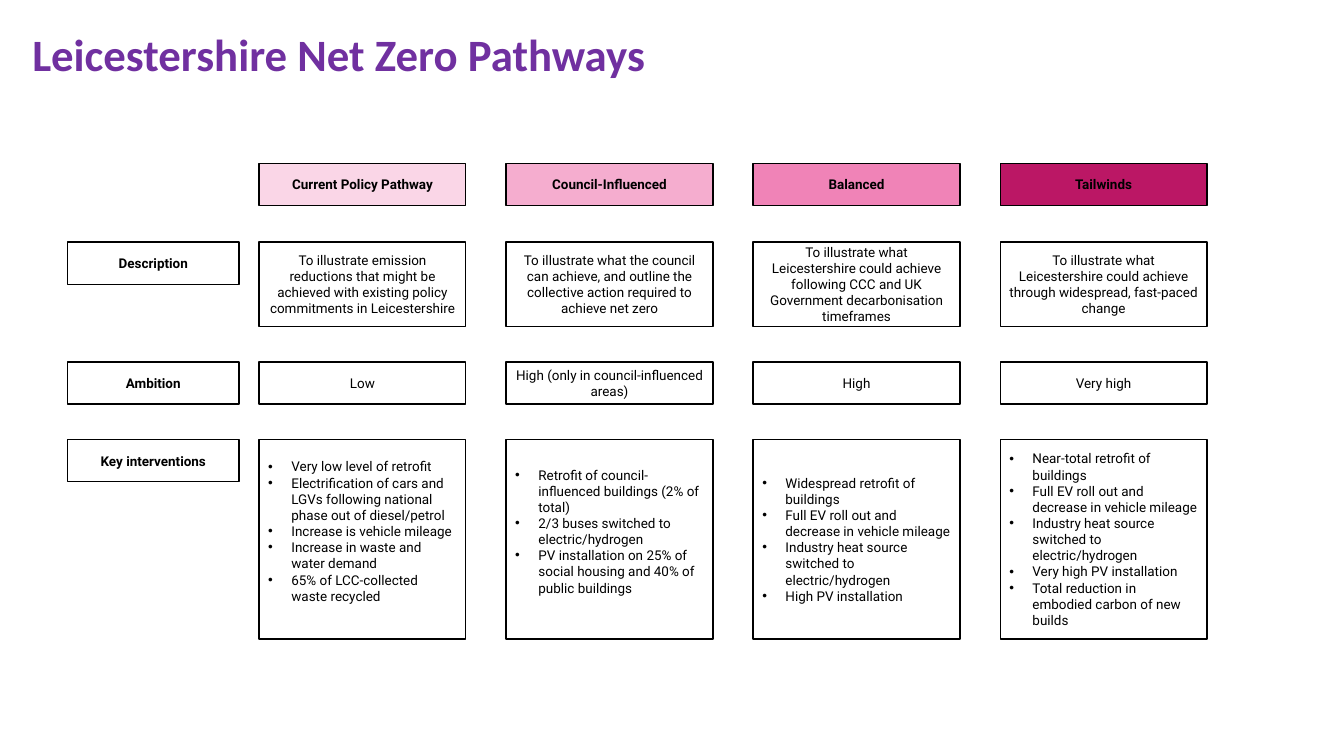
from pptx import Presentation
from pptx.dml.color import RGBColor
from pptx.enum.shapes import MSO_SHAPE
from pptx.enum.text import MSO_ANCHOR, MSO_AUTO_SIZE, PP_ALIGN
from pptx.oxml.ns import qn
from pptx.util import Pt
from lxml.etree import SubElement

SCALE = 9144
COLORS = {"ink": "000000", "title": "7030A0", "low": "FAD6E7",
          "council": "F5ADCF", "high": "F083B7", "tail": "BB1765"}
LINE = 16
INDENT = 23
WIDTH, PITCH = 205, 245

PATHWAYS = [
    ("Current Policy Pathway", "low",
     "To illustrate emission reductions that might be achieved with existing "
     "policy commitments in Leicestershire",
     "Low",
     ["Very low level of retrofit",
      "Electrification of cars and LGVs following national phase out of diesel/petrol",
      "Increase is vehicle mileage",
      "Increase in waste and water demand",
      "65% of LCC-collected waste recycled"], LINE),
    ("Council-Influenced", "council",
     "To illustrate what the council can achieve, and outline the collective "
     "action required to achieve net zero",
     "High (only in council-influenced areas)",
     ["Retrofit of council-influenced buildings (2% of total)",
      "2/3 buses switched to electric/hydrogen",
      "PV installation on 25% of social housing and 40% of public buildings"], LINE),
    ("Balanced", "high",
     "To illustrate what Leicestershire could achieve following CCC and UK "
     "Government decarbonisation timeframes",
     "High",
     ["Widespread retrofit of buildings",
      "Full EV roll out and decrease in vehicle mileage",
      "Industry heat source switched to electric/hydrogen",
      "High PV installation"], 0),
    ("Tailwinds", "tail",
     "To illustrate what Leicestershire could achieve through widespread, "
     "fast-paced change",
     "Very high",
     ["Near-total retrofit of buildings",
      "Full EV roll out and decrease in vehicle mileage",
      "Industry heat source switched to electric/hydrogen",
      "Very high PV installation",
      "Total reduction in embodied carbon of new builds"], 0),
]
LABELS = ["Description", "Ambition", "Key interventions"]
ROWS = [(78, 84), (197, 42), (274, 198)]
HEAD = 42


def px(n):
    return n * SCALE


def color(name):
    return RGBColor.from_string(COLORS[name])


def inset(frame, side, top, foot):
    frame.margin_left = frame.margin_right = px(side)
    frame.margin_top, frame.margin_bottom = px(top), px(foot)


def write(para, text, font, size, tint, bold):
    run = para.add_run()
    run.text = text
    run.font.name = font
    run.font.size = Pt(size)
    run.font.bold = bold
    run.font.color.rgb = color(tint)


def bullet(para):
    props = para._p.get_or_add_pPr()
    props.set("marL", str(px(INDENT)))
    props.set("indent", str(px(-INDENT)))
    SubElement(props, qn("a:buFont")).set("typeface", "Arial")
    SubElement(props, qn("a:buChar")).set("char", "•")


def card(slide, box, lines, fill=None, bold=False, listed=False, pad=0):
    shape = slide.shapes.add_shape(MSO_SHAPE.RECTANGLE, *map(px, box))
    shape.shadow.inherit = False
    if fill:
        shape.fill.solid()
        shape.fill.fore_color.rgb = color(fill)
    else:
        shape.fill.background()
    shape.line.color.rgb = color("ink")
    shape.line.width = Pt(1)
    frame = shape.text_frame
    frame.word_wrap = True
    frame.vertical_anchor = MSO_ANCHOR.MIDDLE
    inset(frame, 9, 3, 3 + pad)
    for i, text in enumerate(lines):
        para = frame.add_paragraph() if i else frame.paragraphs[0]
        para.alignment = PP_ALIGN.LEFT if listed else PP_ALIGN.CENTER
        if listed:
            bullet(para)
        write(para, text, "Roboto", 9.6, "ink", bold)


def heading(slide, box):
    title = slide.shapes.title
    title.left, title.top, title.width, title.height = map(px, box)
    frame = title.text_frame
    frame.word_wrap = True
    frame.auto_size = MSO_AUTO_SIZE.NONE
    frame.vertical_anchor = MSO_ANCHOR.TOP
    inset(frame, 10, 5, 5)
    para = frame.paragraphs[0]
    para.alignment = PP_ALIGN.LEFT
    para.line_spacing = 0.9
    write(para, "Leicestershire Net Zero Pathways", "Calibri", 32, "title", True)


def column(slide, left, top, path):
    name, fill, about, level, steps, pad = path
    card(slide, (left, top, WIDTH, HEAD), [name], fill, bold=True)
    for (drop, high), lines in zip(ROWS, ([about], [level], steps)):
        listed = lines is steps
        card(slide, (left, top + drop, WIDTH, high), lines,
             listed=listed, pad=pad if listed else 0)


def labels(slide, left, top):
    for (drop, _), text in zip(ROWS, LABELS):
        card(slide, (left, top + drop, 170, HEAD), [text], bold=True)


def main():
    deck = Presentation()
    deck.slide_width, deck.slide_height = px(1333), px(750)
    slide = deck.slides.add_slide(deck.slide_layouts[5])
    heading(slide, (22, 28, 1150, 49))
    for i, path in enumerate(PATHWAYS):
        column(slide, 257 + i * PITCH, 162, path)
    labels(slide, 67, 162)
    deck.save("out.pptx")


if __name__ == "__main__":
    main()
